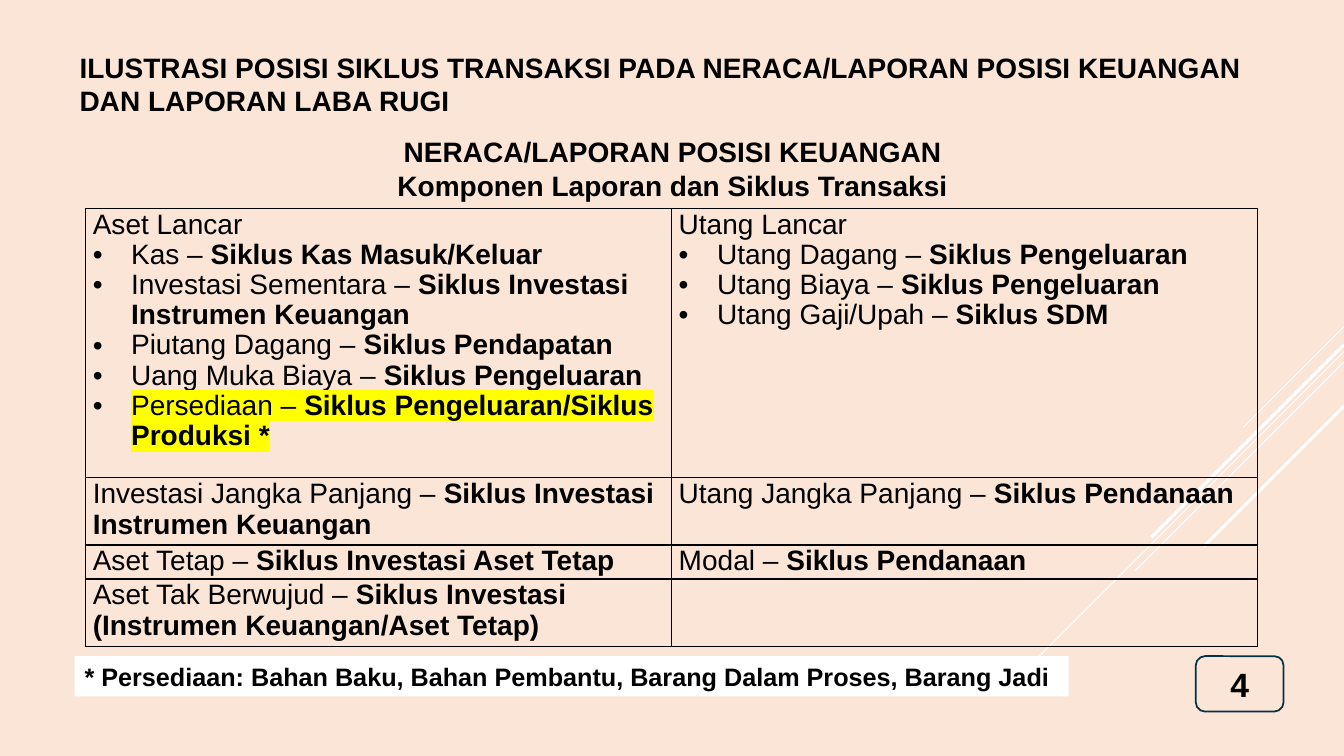
from lxml.etree import SubElement as Sub
from pptx import Presentation
from pptx.dml.color import RGBColor
from pptx.enum.shapes import MSO_CONNECTOR as LINE, MSO_SHAPE as SHAPE
from pptx.enum.text import MSO_ANCHOR as ANCHOR, PP_ALIGN as ALIGN
from pptx.oxml.ns import qn
from pptx.util import Inches, Pt

WIDE, HIGH = 13.33, 7.5
PEACH, BLACK, WHITE, NAVY, YELLOW = "FAE5D7", "000000", "FFFFFF", "043148", "FFFF00"

# Start height and run of each diagonal, line width
RAYS = [(43.2, 7.5, 0.75), (46.53, 24.46, 0.75), (47.87, 15.53, 0.75),
        (45.6, 14.33, 2.25), (53.73, 10.43, 2.25)]

# Each cell: paragraphs of (account, cycle); those after a heading are bullets
ROWS = [
    (35.6,
     [("Aset Lancar", ""),
      ("Kas", "Siklus Kas Masuk/Keluar"),
      ("Investasi Sementara", "Siklus Investasi Instrumen Keuangan"),
      ("Piutang Dagang", "Siklus Pendapatan"),
      ("Uang Muka Biaya", "Siklus Pengeluaran"),
      ("Persediaan", "Siklus Pengeluaran/Siklus Produksi *")],
     [("Utang Lancar", ""),
      ("Utang Dagang", "Siklus Pengeluaran"),
      ("Utang Biaya", "Siklus Pengeluaran"),
      ("Utang Gaji/Upah", "Siklus SDM")]),
    (8.87,
     [("Investasi Jangka Panjang", "Siklus Investasi Instrumen Keuangan")],
     [("Utang Jangka Panjang", "Siklus Pendanaan")]),
    (4.5,
     [("Aset Tetap", "Siklus Investasi Aset Tetap")],
     [("Modal", "Siklus Pendanaan")]),
    (8.87,
     [("Aset Tak Berwujud", "Siklus Investasi (Instrumen Keuangan/Aset Tetap)")],
     []),
]


def across(share):
    return Inches(WIDE * share / 100)


def down(share):
    return Inches(HIGH * share / 100)


def area(left, top, width, height):
    return across(left), down(top), across(width), down(height)


def color(code):
    return RGBColor.from_string(code)


def write(para, text, size=20, bold=True, mark=None):
    run = para.add_run()
    run.text = text
    font = run.font
    font.size, font.bold, font.name = Pt(size), bold, "Arial"
    font.color.rgb = color(BLACK)
    if mark:
        glow = Sub(font._element, qn("a:highlight"))
        Sub(glow, qn("a:srgbClr"), val=mark)
        font._element.find(qn("a:latin")).addprevious(glow)


def label(slide, lines, place, align=ALIGN.LEFT):
    frame = slide.shapes.add_textbox(*area(*place)).text_frame
    frame.word_wrap = True
    for i, line in enumerate(lines):
        para = frame.add_paragraph() if i else frame.paragraphs[0]
        para.alignment = align
        write(para, line)


def box(slide, kind, text, place, fill, edge=None, size=18, align=ALIGN.LEFT, wrap=True):
    shape = slide.shapes.add_shape(kind, *area(*place))
    shape.shadow.inherit = False
    shape.fill.solid()
    shape.fill.fore_color.rgb = color(fill)
    if edge:
        shape.line.color.rgb = color(edge)
        shape.line.width = Pt(1.25)
    else:
        shape.line.fill.background()
    frame = shape.text_frame
    frame.word_wrap = wrap
    frame.vertical_anchor = ANCHOR.MIDDLE
    frame.paragraphs[0].alignment = align
    write(frame.paragraphs[0], text, size=size)


def ray(slide, top, run, width):
    end = down(top) + across(run)
    line = slide.shapes.add_connector(LINE.STRAIGHT, across(100), down(top),
                                      across(100 - run), end)
    line.line.color.rgb = color(WHITE)
    line.line.width = Pt(width)
    Sub(line._element.spPr, qn("a:effectLst"))


def bullet(para):
    para.line_spacing = 0.97
    props = para._p.get_or_add_pPr()
    props.set("marL", str(Inches(0.38)))
    props.set("indent", str(Inches(-0.38)))
    Sub(props, qn("a:buFont"), typeface="Arial")
    Sub(props, qn("a:buChar"), char="•")


def border(cell):
    props = cell._tc.get_or_add_tcPr()
    for side in ("lnL", "lnR", "lnT", "lnB"):
        edge = Sub(props, qn("a:" + side), w=str(Pt(1)))
        Sub(Sub(edge, qn("a:solidFill")), qn("a:srgbClr"), val=BLACK)


def fill_cell(cell, items):
    border(cell)
    cell.fill.background()
    cell.margin_left = cell.margin_right = Inches(0.07)
    cell.margin_top = cell.margin_bottom = 0
    frame = cell.text_frame
    for i, (name, cycle) in enumerate(items):
        para = frame.add_paragraph() if i else frame.paragraphs[0]
        if i:
            bullet(para)
        mark = YELLOW if cycle.endswith("*") else None
        write(para, f"{name} – " if cycle else name, bold=False, mark=mark)
        if cycle:
            write(para, cycle, mark=mark)


def grid(slide, left, top, col):
    tall = sum(row[0] for row in ROWS)
    table = slide.shapes.add_table(len(ROWS), 2, *area(left, top, 2 * col, tall)).table
    table.first_row = table.horz_banding = False
    for row, (height, *cells) in zip(table.rows, ROWS):
        row.height = down(height)
        for cell, items in zip(row.cells, cells):
            fill_cell(cell, items)


def main():
    deck = Presentation()
    deck.slide_width, deck.slide_height = Inches(WIDE), Inches(HIGH)
    slide = deck.slides.add_slide(deck.slide_layouts[6])
    back = slide.background.fill
    back.solid()
    back.fore_color.rgb = color(PEACH)

    # Corner rays and page number
    for item in RAYS:
        ray(slide, *item)
    box(slide, SHAPE.ROUNDED_RECTANGLE, "4", (88.97, 86.8, 6.53, 7.33), PEACH,
        edge=NAVY, size=24, align=ALIGN.CENTER)

    # Title, balance sheet and its heading
    label(slide, ["ILUSTRASI POSISI SIKLUS TRANSAKSI PADA NERACA/LAPORAN POSISI "
                  "KEUANGAN DAN LAPORAN LABA RUGI"], (5.18, 6, 89.72, 10.27))
    grid(slide, 6.38, 27.6, 43.6)
    label(slide, ["NERACA/LAPORAN POSISI KEUANGAN", "Komponen Laporan dan Siklus Transaksi"],
          (25, 17.2, 50.1, 10.27), align=ALIGN.CENTER)

    # Footnote
    box(slide, SHAPE.RECTANGLE,
        "* Persediaan: Bahan Baku, Bahan Pembantu, Barang Dalam Proses, Barang Jadi",
        (5.55, 86.8, 73.97, 5.33), WHITE, wrap=False)
    deck.save("out.pptx")


if __name__ == "__main__":
    main()
